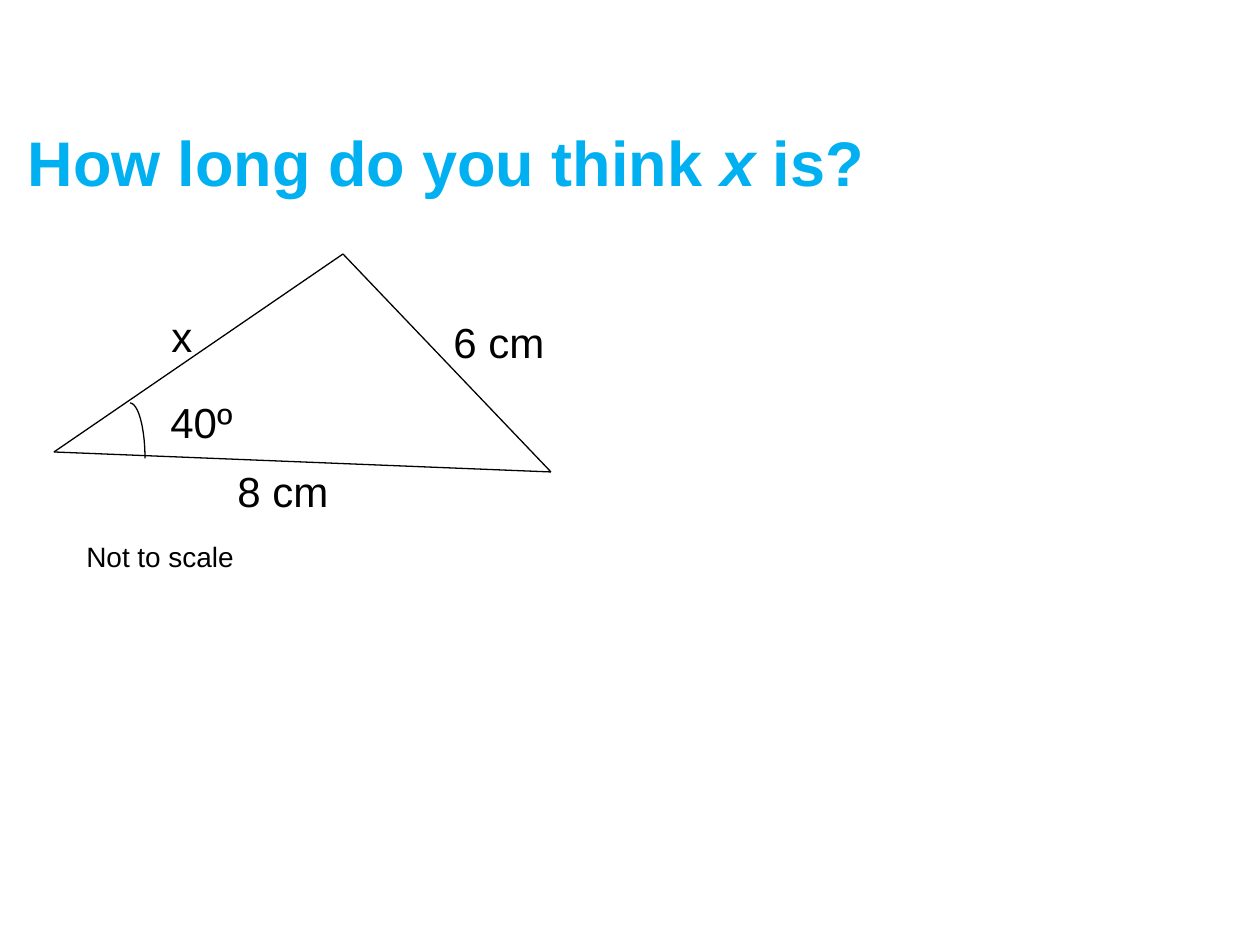
import pptx
import pptx.util
import pptx.dml.color
import pptx.enum.shapes
import pptx.enum.text
import pptx.oxml
import pptx.oxml.ns
from dataclasses import dataclass


@dataclass(frozen=True)
class Theme:
    font: str = "Arial"
    title: str = "00B0F0"
    ink: str = "000000"
    paper: str = "FFFFFF"
    title_size: int = 36
    label_size: int = 24
    note_size: int = 16
    line_width: float = 0.75


THEME = Theme()
SLIDE_SIZE = (1260, 945)
TITLE_BOX = (15, 106, 1201, 110)
TITLE_RUNS = [("How long do you think ", False), ("x", True), (" is?", False)]
TRIANGLE = [(54, 452), (343, 254), (551, 472)]
ANGLE_ARC = (115, 403, 30, 111)
LABELS = [
    ("6 cm", (441, 310, 129, 63), True),
    ("8 cm", (225, 459, 117, 63), False),
    ("40º", (158, 390, 88, 63), False),
    ("x", (159, 304, 44, 63), True),
]
NOTE = ("Not to scale", (74, 533, 312, 47), True)


def px(value):
    return round(value * 914400 / 126)


def color(value):
    return pptx.dml.color.RGBColor.from_string(value)


def style_font(font, size, value):
    font.name = THEME.font
    font.size = pptx.util.Pt(size)
    font.color.rgb = color(value)


def style_line(shape):
    shape.line.color.rgb = color(THEME.ink)
    shape.line.width = pptx.util.Pt(THEME.line_width)


def add_title(slide):
    title = slide.shapes.title
    title.left, title.top, title.width, title.height = map(px, TITLE_BOX)
    frame = title.text_frame
    frame.vertical_anchor = pptx.enum.text.MSO_ANCHOR.MIDDLE
    paragraph = frame.paragraphs[0]
    paragraph.alignment = pptx.enum.text.PP_ALIGN.LEFT
    for text, italic in TITLE_RUNS:
        run = paragraph.add_run()
        run.text = text
        style_font(run.font, THEME.title_size, THEME.title)
        run.font.bold = True
        run.font.italic = italic


def add_text(shapes, text, box, wrap, size):
    frame = shapes.add_textbox(*map(px, box)).text_frame
    frame.word_wrap = wrap
    frame.auto_size = pptx.enum.text.MSO_AUTO_SIZE.SHAPE_TO_FIT_TEXT
    frame.text = text
    style_font(frame.paragraphs[0].runs[0].font, size, THEME.ink)


def add_side(shapes, start, end):
    side = shapes.add_connector(
        pptx.enum.shapes.MSO_CONNECTOR.STRAIGHT, *map(px, start + end))
    style_line(side)
    properties = side._element.spPr
    properties.append(pptx.oxml.parse_xml(
        f"<a:effectLst {pptx.oxml.ns.nsdecls('a')}/>"))


def add_diagram(slide):
    shapes = slide.shapes.add_group_shape().shapes
    arc = shapes.add_shape(
        pptx.enum.shapes.MSO_SHAPE.ARC, *map(px, ANGLE_ARC))
    arc.shadow.inherit = False
    arc.fill.solid()
    arc.fill.fore_color.rgb = color(THEME.paper)
    style_line(arc)
    left, top, right = TRIANGLE
    for start, end in [(left, top), (top, right), (left, right)]:
        add_side(shapes, start, end)
    for label in LABELS:
        add_text(shapes, *label, THEME.label_size)


def main():
    presentation = pptx.Presentation()
    presentation.slide_width, presentation.slide_height = map(px, SLIDE_SIZE)
    slide = presentation.slides.add_slide(presentation.slide_layouts[5])
    add_title(slide)
    add_diagram(slide)
    add_text(slide.shapes, *NOTE, THEME.note_size)
    presentation.save("out.pptx")


if __name__ == "__main__":
    main()
